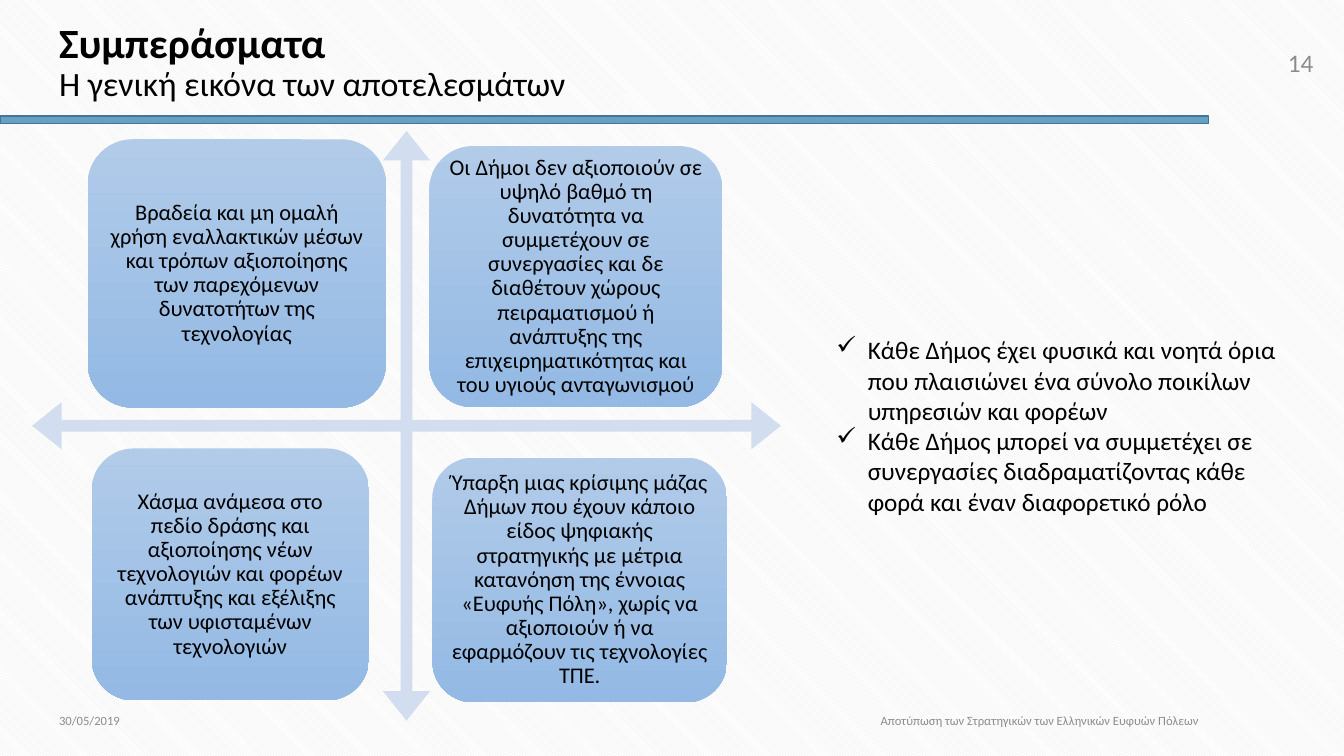
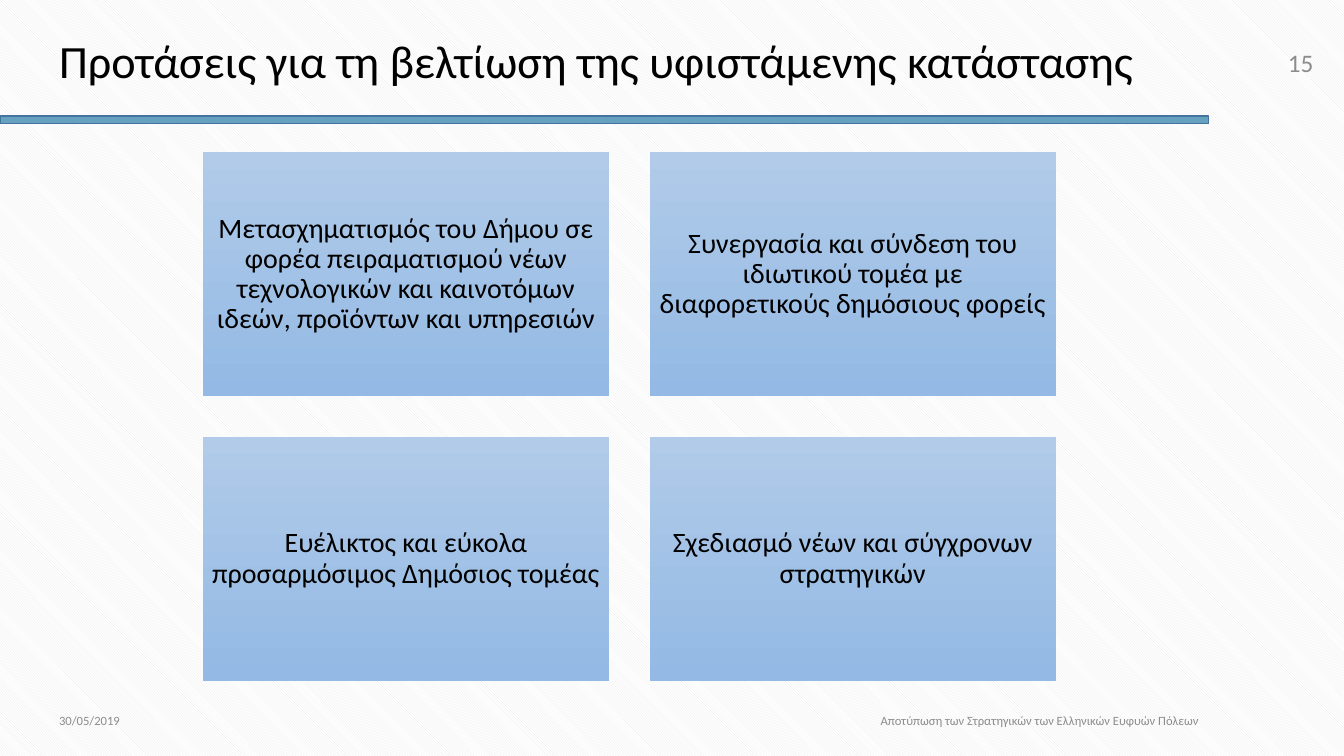
from dataclasses import dataclass

import pptx
import pptx.dml.color
import pptx.enum.dml
import pptx.enum.shapes
import pptx.enum.text
import pptx.oxml.ns
import pptx.shapes.autoshape
import pptx.slide
import pptx.text.text
import pptx.util
from lxml import etree

Cm = pptx.util.Cm
Align = pptx.enum.text.PP_ALIGN
Anchor = pptx.enum.text.MSO_ANCHOR
Preset = pptx.enum.shapes.MSO_SHAPE

FONT = "Calibri"
INK, MUTED = "000000", "8C8C8C"
PATTERN_LINES, PAPER = "E7E6E6", "FFFFFF"
BAND, BAND_EDGE = "66A2BF", "43739E"
CARD_TOP, CARD_BOTTOM = "B1CBE9", "93B9E4"
ARROW = "D2DEEF"

DATE = "30/05/2019"
FOOTER = "Αποτύπωση των Στρατηγικών των Ελληνικών Ευφυών Πόλεων"


@dataclass(frozen=True)
class Box:
    """Position and size in centimetres."""
    left: float
    top: float
    width: float
    height: float

    def lengths(self) -> tuple[pptx.util.Length, ...]:
        return Cm(self.left), Cm(self.top), Cm(self.width), Cm(self.height)


@dataclass(frozen=True)
class Card:
    box: Box
    text: str


@dataclass(frozen=True)
class CardStyle:
    preset: Preset
    size: float
    inset: float


ROUNDED = CardStyle(Preset.ROUNDED_RECTANGLE, 16, 0.17)
SQUARE = CardStyle(Preset.RECTANGLE, 20, 0.2)

TITLE_BOX = Box(1.24, 0.33, 29.21, 2.54)
BAND_BOX = Box(0, 2.92, 30.45, 0.2)
DATE_BOX = Box(1.24, 17.65, 7.62, 1.02)
FOOTER_BOX = Box(11.22, 17.65, 19.23, 1.02)
NUMBER_BOX = Box(31.55, 0.3, 1.8, 2.54)

ARROW_BOX = Box(0.81, 3.3, 18.87, 14.86)
FINDINGS = [
    Card(Box(2.21, 3.51, 7.52, 6.76),
         "Βραδεία και μη ομαλή χρήση εναλλακτικών μέσων και τρόπων αξιοποίησης "
         "των παρεχόμενων δυνατοτήτων της τεχνολογίας"),
    Card(Box(10.82, 3.68, 7.39, 6.58),
         "Οι Δήμοι δεν αξιοποιούν σε υψηλό βαθμό τη δυνατότητα να συμμετέχουν σε "
         "συνεργασίες και δε διαθέτουν χώρους πειραματισμού ή ανάπτυξης της "
         "επιχειρηματικότητας και του υγιούς ανταγωνισμού"),
    Card(Box(2.31, 11.3, 6.99, 6.35),
         "Χάσμα ανάμεσα στο πεδίο δράσης και αξιοποίησης νέων τεχνολογιών και "
         "φορέων ανάπτυξης και εξέλιξης των υφισταμένων τεχνολογιών"),
    Card(Box(10.9, 11.53, 7.42, 6.17),
         "Ύπαρξη μιας κρίσιμης μάζας Δήμων που έχουν κάποιο είδος ψηφιακής "
         "στρατηγικής με μέτρια κατανόηση της έννοιας «Ευφυής Πόλη», χωρίς να "
         "αξιοποιούν ή να εφαρμόζουν τις τεχνολογίες ΤΠΕ."),
]
REMARKS_BOX = Box(20.83, 8.31, 11.63, 4.88)
REMARKS = [
    "Κάθε Δήμος έχει φυσικά και νοητά όρια που πλαισιώνει ένα σύνολο ποικίλων "
    "υπηρεσιών και φορέων",
    "Κάθε Δήμος μπορεί να συμμετέχει σε συνεργασίες διαδραματίζοντας κάθε φορά "
    "και έναν διαφορετικό ρόλο",
]

FIRST_PROPOSAL = Box(5.11, 3.84, 10.24, 6.15)
PROPOSAL_GAP = 1.02
PROPOSALS = [
    "Μετασχηματισμός του Δήμου σε φορέα πειραματισμού νέων τεχνολογικών και "
    "καινοτόμων ιδεών, προϊόντων και υπηρεσιών",
    "Συνεργασία και σύνδεση του ιδιωτικού τομέα με διαφορετικούς δημόσιους φορείς",
    "Ευέλικτος και εύκολα προσαρμόσιμος Δημόσιος τομέας",
    "Σχεδιασμό νέων και σύγχρονων στρατηγικών",
]


def rgb(value: str) -> pptx.dml.color.RGBColor:
    return pptx.dml.color.RGBColor.from_string(value)


def style_font(font: pptx.text.text.Font, size: float, color: str = INK) -> None:
    font.name = FONT
    font.size = pptx.util.Pt(size)
    font.color.rgb = rgb(color)


def add_text_box(slide: pptx.slide.Slide, box: Box,
                 anchor: Anchor = Anchor.MIDDLE) -> pptx.text.text.TextFrame:
    frame = slide.shapes.add_textbox(*box.lengths()).text_frame
    frame.word_wrap = True
    frame.vertical_anchor = anchor
    return frame


def add_label(slide: pptx.slide.Slide, box: Box, text: str, size: float,
              align: Align = Align.LEFT) -> None:
    paragraph = add_text_box(slide, box).paragraphs[0]
    paragraph.text = text
    paragraph.alignment = align
    style_font(paragraph.font, size, MUTED)


def add_plain_shape(slide: pptx.slide.Slide, preset: Preset,
                    box: Box) -> pptx.shapes.autoshape.Shape:
    """Add a shape without shadow or outline."""
    shape = slide.shapes.add_shape(preset, *box.lengths())
    shape.shadow.inherit = False
    shape.line.fill.background()
    return shape


def add_card(slide: pptx.slide.Slide, card: Card, style: CardStyle) -> None:
    shape = add_plain_shape(slide, style.preset, card.box)
    shape.fill.gradient()
    shape.fill.gradient_angle = 270
    for stop, color, position in zip(shape.fill.gradient_stops,
                                     (CARD_TOP, CARD_BOTTOM), (0, 1)):
        stop.color.rgb = rgb(color)
        stop.position = position
    frame = shape.text_frame
    frame.word_wrap = True
    frame.vertical_anchor = Anchor.MIDDLE
    frame.margin_left = frame.margin_right = Cm(style.inset)
    frame.margin_top = frame.margin_bottom = Cm(style.inset)
    paragraph = frame.paragraphs[0]
    paragraph.text = card.text
    paragraph.alignment = Align.CENTER
    paragraph.line_spacing = 0.9
    style_font(paragraph.font, style.size)


def add_check_list(slide: pptx.slide.Slide, box: Box, items: list[str]) -> None:
    frame = add_text_box(slide, box, Anchor.TOP)
    for index, item in enumerate(items):
        paragraph = frame.add_paragraph() if index else frame.paragraphs[0]
        paragraph.text = item
        properties = paragraph._p.get_or_add_pPr()
        properties.set("marL", str(Cm(0.79)))
        properties.set("indent", str(-Cm(0.79)))
        etree.SubElement(properties, pptx.oxml.ns.qn("a:buChar"), char="✓")
        style_font(paragraph.font, 18)


def add_base_slide(deck: pptx.presentation.Presentation,
                   number: int) -> tuple[pptx.slide.Slide, pptx.text.text._Paragraph]:
    """Add a slide with the shared parts; also return its empty title paragraph."""
    slide = deck.slides.add_slide(deck.slide_layouts[6])
    background = slide.background.fill
    background.patterned()
    background.pattern = pptx.enum.dml.MSO_PATTERN.LIGHT_DOWNWARD_DIAGONAL
    background.fore_color.rgb = rgb(PATTERN_LINES)
    background.back_color.rgb = rgb(PAPER)

    band = add_plain_shape(slide, Preset.RECTANGLE, BAND_BOX)
    band.fill.solid()
    band.fill.fore_color.rgb = rgb(BAND)
    band.line.color.rgb = rgb(BAND_EDGE)
    band.line.width = pptx.util.Pt(1)

    title = add_text_box(slide, TITLE_BOX).paragraphs[0]
    title.line_spacing = 0.9
    add_label(slide, DATE_BOX, DATE, 9)
    add_label(slide, FOOTER_BOX, FOOTER, 9, Align.RIGHT)
    add_label(slide, NUMBER_BOX, str(number), 18, Align.RIGHT)
    return slide, title


def build_conclusions(deck: pptx.presentation.Presentation) -> None:
    slide, title = add_base_slide(deck, 14)
    heading = title.add_run()
    heading.text = "Συμπεράσματα"
    style_font(heading.font, 29.7)
    heading.font.bold = True
    title.add_line_break()
    subheading = title.add_run()
    subheading.text = "Η γενική εικόνα των αποτελεσμάτων"
    style_font(subheading.font, 24.3)

    arrow = add_plain_shape(slide, Preset.QUAD_ARROW, ARROW_BOX)
    arrow.fill.solid()
    arrow.fill.fore_color.rgb = rgb(ARROW)
    for index, ratio in enumerate((0.02, 0.04, 0.05)):
        arrow.adjustments[index] = ratio
    for finding in FINDINGS:
        add_card(slide, finding, ROUNDED)
    add_check_list(slide, REMARKS_BOX, REMARKS)


def build_proposals(deck: pptx.presentation.Presentation) -> None:
    slide, title = add_base_slide(deck, 15)
    title.text = "Προτάσεις για τη βελτίωση της υφιστάμενης κατάστασης"
    style_font(title.font, 33)
    first = FIRST_PROPOSAL
    for index, proposal in enumerate(PROPOSALS):
        row, column = divmod(index, 2)
        box = Box(first.left + column * (first.width + PROPOSAL_GAP),
                  first.top + row * (first.height + PROPOSAL_GAP),
                  first.width, first.height)
        add_card(slide, Card(box, proposal), SQUARE)


def main() -> None:
    deck = pptx.Presentation()
    deck.slide_width, deck.slide_height = Cm(33.87), Cm(19.05)
    build_conclusions(deck)
    build_proposals(deck)
    deck.save("out.pptx")


if __name__ == "__main__":
    main()
